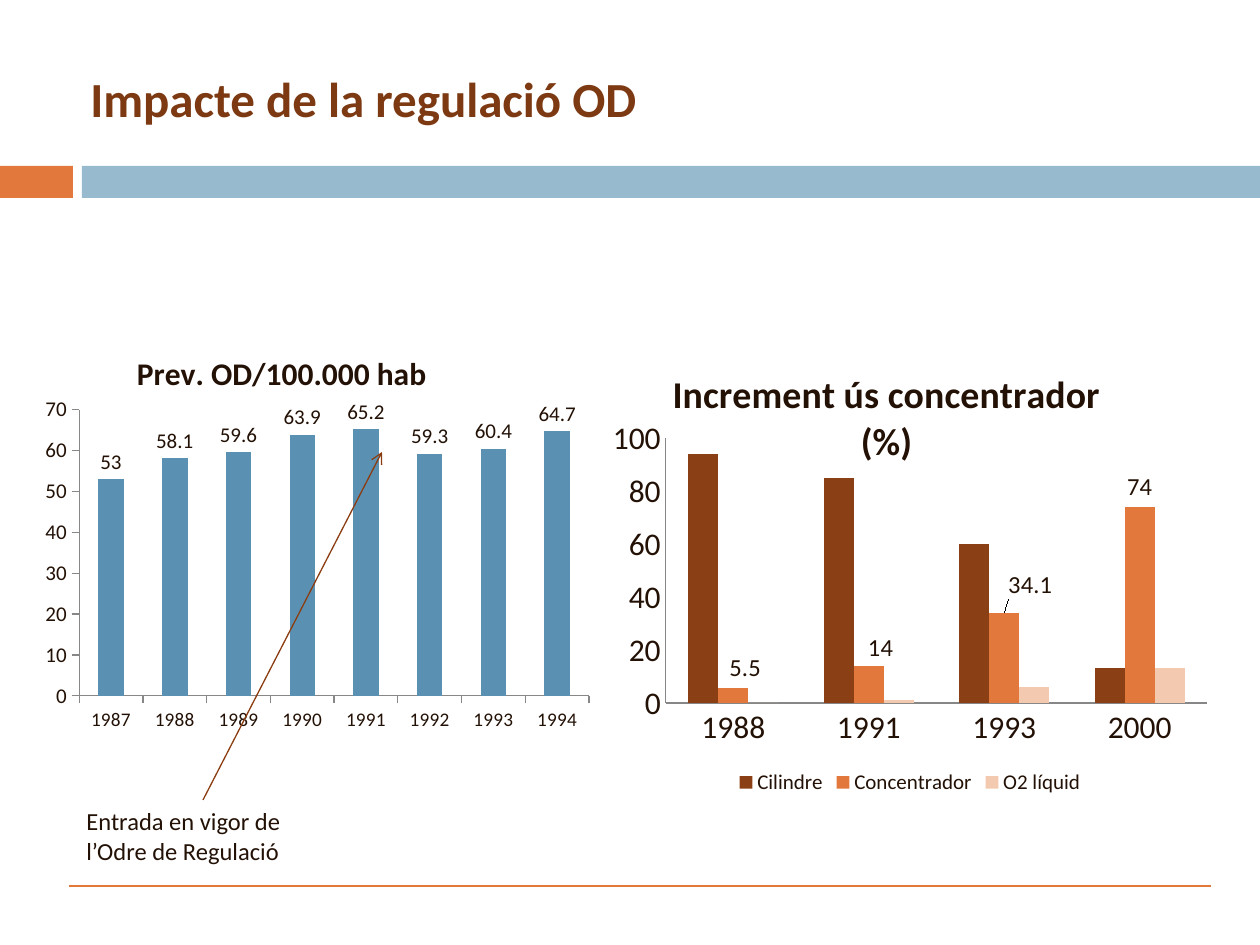
"""Build the slide on the impact of regulating home oxygen."""
from lxml.etree import SubElement
from pptx import Presentation
from pptx.chart.data import CategoryChartData
from pptx.dml.color import RGBColor
from pptx.enum.chart import XL_CHART_TYPE, XL_LABEL_POSITION, XL_LEGEND_POSITION, XL_TICK_MARK
from pptx.enum.shapes import MSO_CONNECTOR, MSO_SHAPE
from pptx.enum.text import MSO_ANCHOR
from pptx.oxml import parse_xml
from pptx.oxml.ns import nsdecls, qn
from pptx.util import Pt

PX = 914400 / 126
FONT = "Calibri"
COLORS = {
    "orange": "E2783B", "sky": "97BACF", "blue": "5A91B3", "brown": "8B3F14",
    "title": "7C3912", "text": "231106", "peach": "F3C9B0", "arrow": "8B3D11",
    "axis": "878787",
}

BANDS = [((0, 166, 73, 32), "orange"), ((82, 166, 1178, 32), "sky")]
TEXTS = [
    ("Impacte de la regulació OD", (78, 39, 1119, 118), 28, True, "title", MSO_ANCHOR.MIDDLE),
    ("Entrada en vigor de l’Odre de Regulació", (74, 800, 228, 72), 14, False, "text", MSO_ANCHOR.TOP),
]
LINES = [((69, 886, 1211, 886), "orange", False), ((203, 800, 382, 452), "arrow", True)]
CHARTS = [
    {
        "box": (35, 324, 566, 417), "plot": (79, 410, 510, 286),
        "title": "Prev. OD/100.000 hab", "title_at": (131, 346), "title_size": 18,
        "cats": [str(year) for year in range(1987, 1995)],
        "series": [("Series 1", [53, 58.1, 59.6, 63.9, 65.2, 59.3, 60.4, 64.7], "blue")],
        "labelled": 0, "label_size": 12, "shifts": [],
        "max": 70, "step": 10, "tick": XL_TICK_MARK.OUTSIDE, "sizes": (11, 12), "legend": False,
    },
    {
        "box": (600, 334, 620, 466), "plot": (666, 438, 542, 265),
        "title": "Increment ús concentrador (%)", "title_at": (666, 360), "title_size": 21.6,
        "cats": ["1988", "1991", "1993", "2000"],
        "series": [
            ("Cilindre", [94, 85, 60, 13], "brown"),
            ("Concentrador", [5.5, 14, 34.1, 74], "orange"),
            ("O2 líquid", [0, 1, 6, 13], "peach"),
        ],
        "labelled": 1, "label_size": 14, "shifts": [(12, 0), (12, 2), (26, -8)],
        "max": 100, "step": 20, "tick": XL_TICK_MARK.NONE, "sizes": (18, 18), "legend": True,
    },
]


def emu(*lengths):
    return [round(v * PX) for v in lengths]


def rgb(name):
    return RGBColor.from_string(COLORS[name])


def style(font, size, color="text", bold=False):
    font.name, font.size, font.bold = FONT, Pt(size), bold
    font.color.rgb = rgb(color)


def set_layout(parent, index, **values):
    for old in parent.findall(qn("c:layout")):
        parent.remove(old)
    layout = parse_xml(f"<c:layout {nsdecls('c')}><c:manualLayout/></c:layout>")
    for tag, value in values.items():
        SubElement(layout[0], qn(f"c:{tag}")).set("val", str(value))
    parent.insert(index, layout)


def add_band(slide, box, color):
    sp = slide.shapes.add_shape(MSO_SHAPE.RECTANGLE, *emu(*box))
    sp.shadow.inherit = False
    sp.fill.solid()
    sp.fill.fore_color.rgb = rgb(color)
    sp.line.fill.background()


def add_text(slide, text, box, size, bold, color, anchor):
    tf = slide.shapes.add_textbox(*emu(*box)).text_frame
    tf.word_wrap = True
    tf.vertical_anchor = anchor
    p = tf.paragraphs[0]
    p.text = text
    style(p.font, size, color, bold)


def add_line(slide, ends, color, arrow):
    line = slide.shapes.add_connector(MSO_CONNECTOR.STRAIGHT, *emu(*ends))
    line.line.color.rgb = rgb(color)
    line.line.width = Pt(0.75)
    if arrow:
        SubElement(line.line._get_or_add_ln(), qn("a:tailEnd")).set("type", "arrow")
    SubElement(line._element.spPr, qn("a:effectLst"))


def style_axis(axis, size, tick):
    axis.has_major_gridlines = False
    axis.major_tick_mark = tick
    axis.minor_tick_mark = XL_TICK_MARK.NONE
    axis.format.line.color.rgb = rgb("axis")
    style(axis.tick_labels.font, size)


def add_labels(series, size, shifts, width, height):
    labels = series.data_labels
    labels.show_value = True
    labels.position = XL_LABEL_POSITION.OUTSIDE_END
    style(labels.font, size)
    for i, (dx, dy) in enumerate(shifts):
        label = series.points[i].data_label
        label.position = XL_LABEL_POSITION.OUTSIDE_END
        style(label.font, size)
        dlbl = labels._element.findall(qn("c:dLbl"))[i]
        set_layout(dlbl, 1, x=round(dx / width, 3), y=round(dy / height, 3))


def add_chart(slide, c):
    data = CategoryChartData()
    data.categories = c["cats"]
    for name, values, _ in c["series"]:
        data.add_series(name, values)
    left, top, width, height = c["box"]
    chart = slide.shapes.add_chart(XL_CHART_TYPE.COLUMN_CLUSTERED, *emu(*c["box"]), data).chart
    style(chart.font, 18)

    chart.has_title = True
    p = chart.chart_title.text_frame.paragraphs[0]
    p.text = c["title"]
    style(p.font, c["title_size"], bold=True)
    x, y = c["title_at"]
    set_layout(chart.chart_title._element, 1, xMode="edge", yMode="edge",
               x=round((x - left) / width, 3), y=round((y - top) / height, 3))
    x, y, w, h = c["plot"]
    set_layout(chart._chartSpace.chart.plotArea, 0, layoutTarget="inner", xMode="edge", yMode="edge",
               x=round((x - left) / width, 3), y=round((y - top) / height, 3),
               w=round(w / width, 3), h=round(h / height, 3))

    plot = chart.plots[0]
    plot.gap_width, plot.overlap, plot.vary_by_categories = 150, 0, False
    for series, (_, _, color) in zip(plot.series, c["series"]):
        series.format.fill.solid()
        series.format.fill.fore_color.rgb = rgb(color)
    add_labels(plot.series[c["labelled"]], c["label_size"], c["shifts"], width, height)

    for axis, size in zip((chart.category_axis, chart.value_axis), c["sizes"]):
        style_axis(axis, size, c["tick"])
    chart.value_axis.minimum_scale = 0
    chart.value_axis.maximum_scale = c["max"]
    chart.value_axis.major_unit = c["step"]

    chart.has_legend = c["legend"]
    if c["legend"]:
        chart.legend.position = XL_LEGEND_POSITION.BOTTOM
        chart.legend.include_in_layout = False
        style(chart.legend.font, 12)


def main():
    prs = Presentation()
    prs.slide_width, prs.slide_height = emu(1260, 945)
    slide = prs.slides.add_slide(prs.slide_layouts[6])
    for band in BANDS:
        add_band(slide, *band)
    for chart in CHARTS:
        add_chart(slide, chart)
    for line in LINES:
        add_line(slide, *line)
    for text in TEXTS:
        add_text(slide, *text)
    prs.save("out.pptx")


if __name__ == "__main__":
    main()
